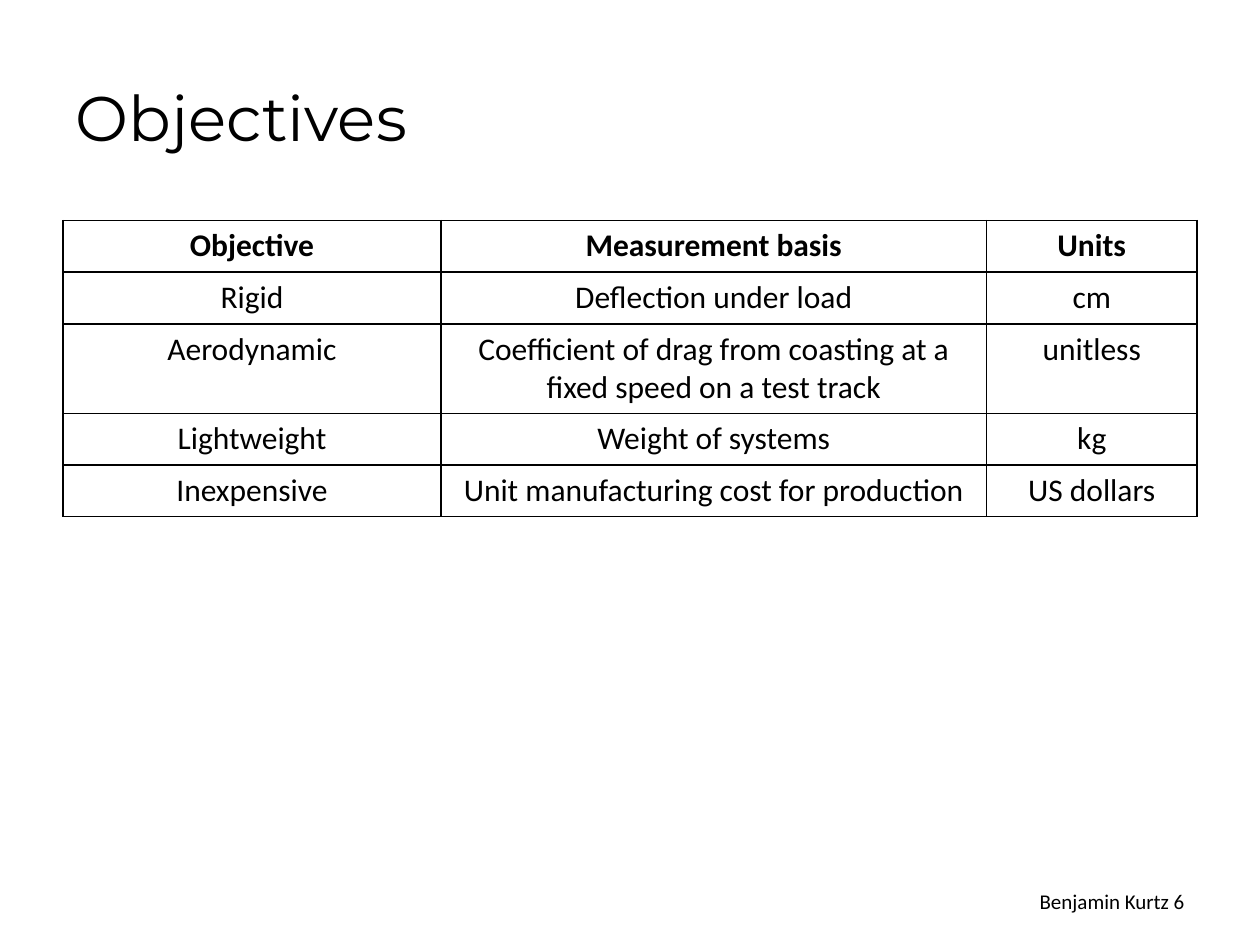
from lxml import etree
from pptx import Presentation
from pptx import util as u
from pptx.dml.color import RGBColor
from pptx.enum import text
from pptx.oxml import ns

BLACK = RGBColor(0, 0, 0)
WHITE = RGBColor(255, 255, 255)
TITLE_FONT = "Montserrat"
BODY_FONT = "Calibri"
TITLE_ONLY = 5

OBJECTIVES = [
    ("Objective", "Measurement basis", "Units"),
    ("Rigid", "Deflection under load", "cm"),
    ("Aerodynamic",
     "Coefficient of drag from coasting at a fixed speed on a test track",
     "unitless"),
    ("Lightweight", "Weight of systems", "kg"),
    ("Inexpensive", "Unit manufacturing cost for production", "US dollars"),
]


def write(frame, words, size=18, font=BODY_FONT, bold=False, color=BLACK,
          align=text.PP_ALIGN.CENTER):
    paragraph = frame.paragraphs[0]
    paragraph.alignment = align
    run = paragraph.add_run()
    run.text = words
    run.font.size = u.Pt(size)
    run.font.name = font
    run.font.bold = bold
    run.font.color.rgb = color


def border_cell(cell, color=BLACK, width=1):
    properties = cell._tc.get_or_add_tcPr()
    for side in ("lnL", "lnR", "lnT", "lnB"):
        line = etree.SubElement(properties, ns.qn(f"a:{side}"), w=str(u.Pt(width)))
        fill = etree.SubElement(line, ns.qn("a:solidFill"))
        etree.SubElement(fill, ns.qn("a:srgbClr"), val=str(color))


class SlideBuilder:
    """Places elements inside the side margins; lengths are in inches."""

    margin = 0.5
    width = 10
    height = 7.5
    row_height = 0.41

    def __init__(self):
        self.presentation = Presentation()
        self.presentation.slide_width = u.Inches(self.width)
        self.presentation.slide_height = u.Inches(self.height)
        layout = self.presentation.slide_layouts[TITLE_ONLY]
        self.slide = self.presentation.slides.add_slide(layout)
        background = self.slide.background.fill
        background.solid()
        background.fore_color.rgb = WHITE
        self.content_width = self.width - 2 * self.margin

    def title(self, words, top, height):
        shape = self.slide.shapes.title
        shape.left, shape.top = u.Inches(self.margin), u.Inches(top)
        shape.width, shape.height = u.Inches(self.content_width), u.Inches(height)
        shape.text_frame.vertical_anchor = text.MSO_ANCHOR.MIDDLE
        write(shape.text_frame, words, size=36, font=TITLE_FONT,
              align=text.PP_ALIGN.LEFT)

    def table(self, rows, column_widths, top):
        table = self.slide.shapes.add_table(
            len(rows), len(column_widths), u.Inches(self.margin), u.Inches(top),
            u.Inches(self.content_width),
            u.Inches(self.row_height * len(rows))).table
        table.first_row = table.horz_banding = False
        for column, width in zip(table.columns, column_widths):
            column.width = u.Inches(width)
        for row_index, row in enumerate(rows):
            for column_index, words in enumerate(row):
                cell = table.cell(row_index, column_index)
                border_cell(cell)
                cell.fill.background()
                write(cell.text_frame, words, bold=row_index == 0)

    def footer(self, words, top, width, height):
        box = self.slide.shapes.add_textbox(
            u.Inches(self.width - self.margin - width), u.Inches(top),
            u.Inches(width), u.Inches(height))
        box.text_frame.word_wrap = True
        box.text_frame.vertical_anchor = text.MSO_ANCHOR.MIDDLE
        write(box.text_frame, words, size=12, align=text.PP_ALIGN.RIGHT)


def main():
    builder = SlideBuilder()
    builder.title("Objectives", top=0.3, height=1.25)
    builder.table(OBJECTIVES, column_widths=(3, 4.33, 1.67), top=1.75)
    builder.footer("Benjamin Kurtz 6", top=6.95, width=2.33, height=0.4)
    builder.presentation.save("out.pptx")


if __name__ == "__main__":
    main()
